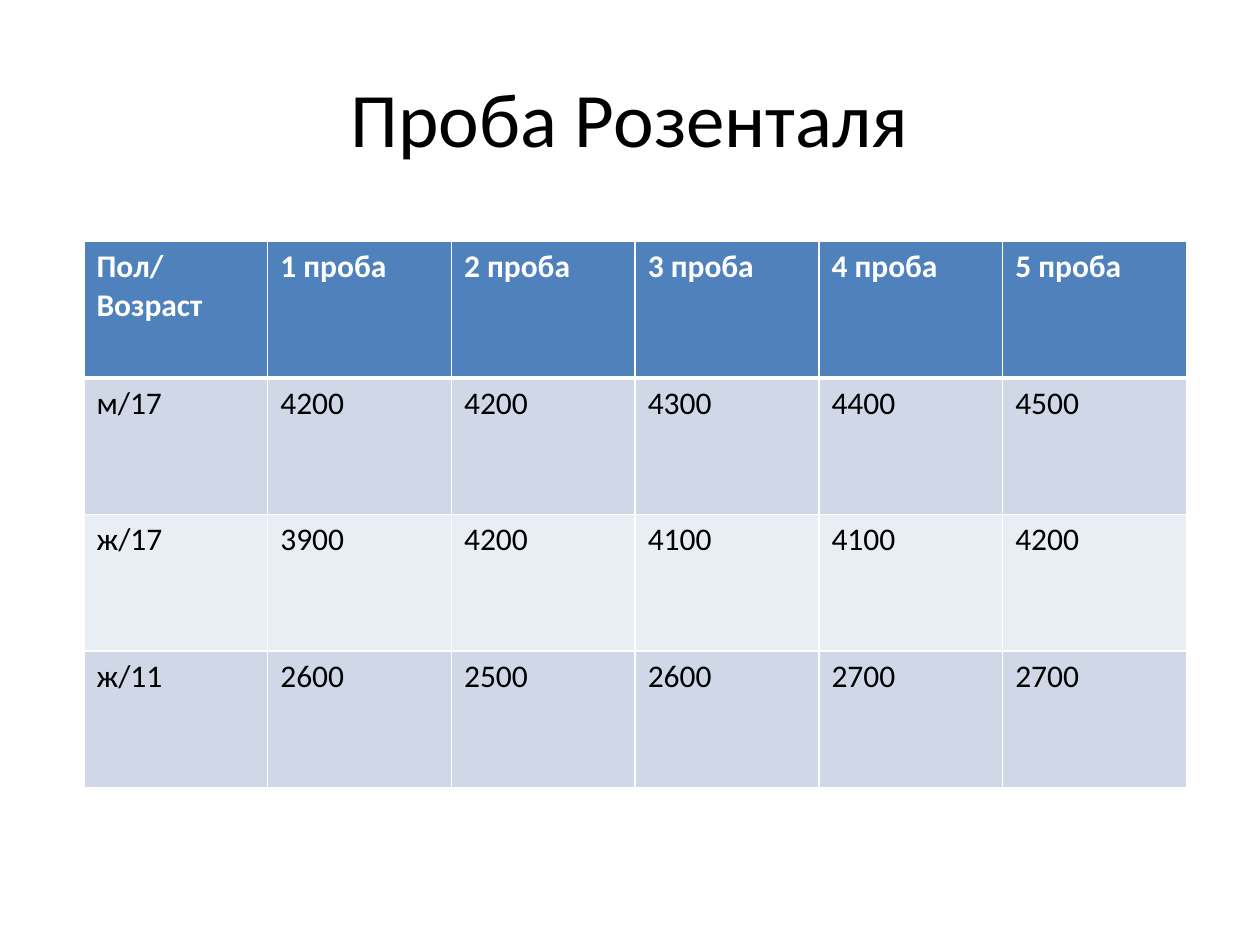
import pptx
import pptx.dml.color
import pptx.enum.text
import pptx.oxml.ns
import pptx.util
from lxml import etree

# Content
HEADING = "Проба Розенталя"
HEADER = ["Пол/Возраст"] + [f"{n} проба" for n in range(1, 6)]
RESULTS = [
    ("м/17", 4200, 4200, 4300, 4400, 4500),
    ("ж/17", 3900, 4200, 4100, 4100, 4200),
    ("ж/11", 2600, 2500, 2600, 2700, 2700),
]

# Layout in px, 96 to the inch
PX = 9525
SLIDE = (960, 720)
HEADING_BOX = (48, 29, 864, 120)
TABLE_LEFT, TABLE_TOP = 64, 184
COLUMN_WIDTH, ROW_HEIGHT = 140, 104

# Style
FONT = "Calibri"
BLACK, WHITE = "000000", "FFFFFF"
HEADER_FILL = "4F81BD"
BAND_FILLS = ("D0D8E8", "E9EDF4")


def px(*lengths):
    return [pptx.util.Emu(length * PX) for length in lengths]


def color(hex_string):
    return pptx.dml.color.RGBColor.from_string(hex_string)


def write(paragraph, text, size, ink, bold=False):
    run = paragraph.add_run()
    run.text = text
    run.font.name = FONT
    run.font.size = pptx.util.Pt(size)
    run.font.bold = bold
    run.font.color.rgb = color(ink)


def draw_borders(cell, top, bottom):
    properties = cell._tc.get_or_add_tcPr()
    qn = pptx.oxml.ns.qn
    for side, points in (("L", 1), ("R", 1), ("T", top), ("B", bottom)):
        line = etree.SubElement(properties, qn(f"a:ln{side}"), w=str(pptx.util.Pt(points)))
        fill = etree.SubElement(line, qn("a:solidFill"))
        etree.SubElement(fill, qn("a:srgbClr"), val=WHITE)


presentation = pptx.Presentation()
presentation.slide_width, presentation.slide_height = px(*SLIDE)
slide = presentation.slides.add_slide(presentation.slide_layouts[5])

# Heading
heading = slide.shapes.title
heading.left, heading.top, heading.width, heading.height = px(*HEADING_BOX)
heading.text_frame.vertical_anchor = pptx.enum.text.MSO_ANCHOR.MIDDLE
heading_line = heading.text_frame.paragraphs[0]
heading_line.alignment = pptx.enum.text.PP_ALIGN.CENTER
write(heading_line, HEADING, 44, BLACK)

# Results table
rows = [HEADER] + RESULTS
table_box = px(TABLE_LEFT, TABLE_TOP, COLUMN_WIDTH * len(HEADER), ROW_HEIGHT * len(rows))
results_table = slide.shapes.add_table(len(rows), len(HEADER), *table_box).table

for r, values in enumerate(rows):
    is_header = r == 0
    for c, value in enumerate(values):
        cell = results_table.cell(r, c)
        draw_borders(cell, top=3 if r == 1 else 1, bottom=3 if is_header else 1)
        cell.fill.solid()
        cell.fill.fore_color.rgb = color(HEADER_FILL if is_header else BAND_FILLS[(r - 1) % 2])
        write(cell.text_frame.paragraphs[0], str(value), 18,
              WHITE if is_header else BLACK, bold=is_header)

presentation.save("out.pptx")
